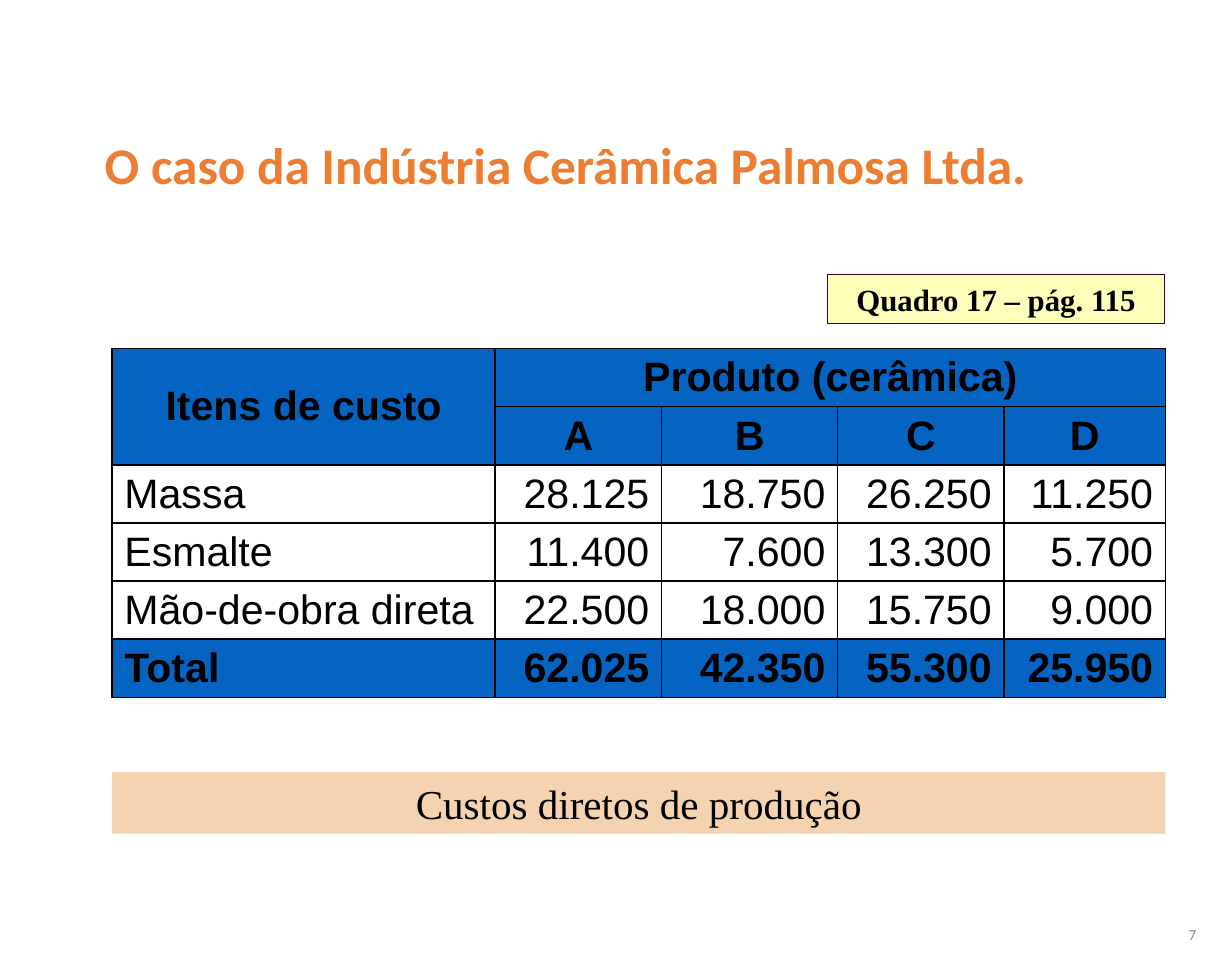
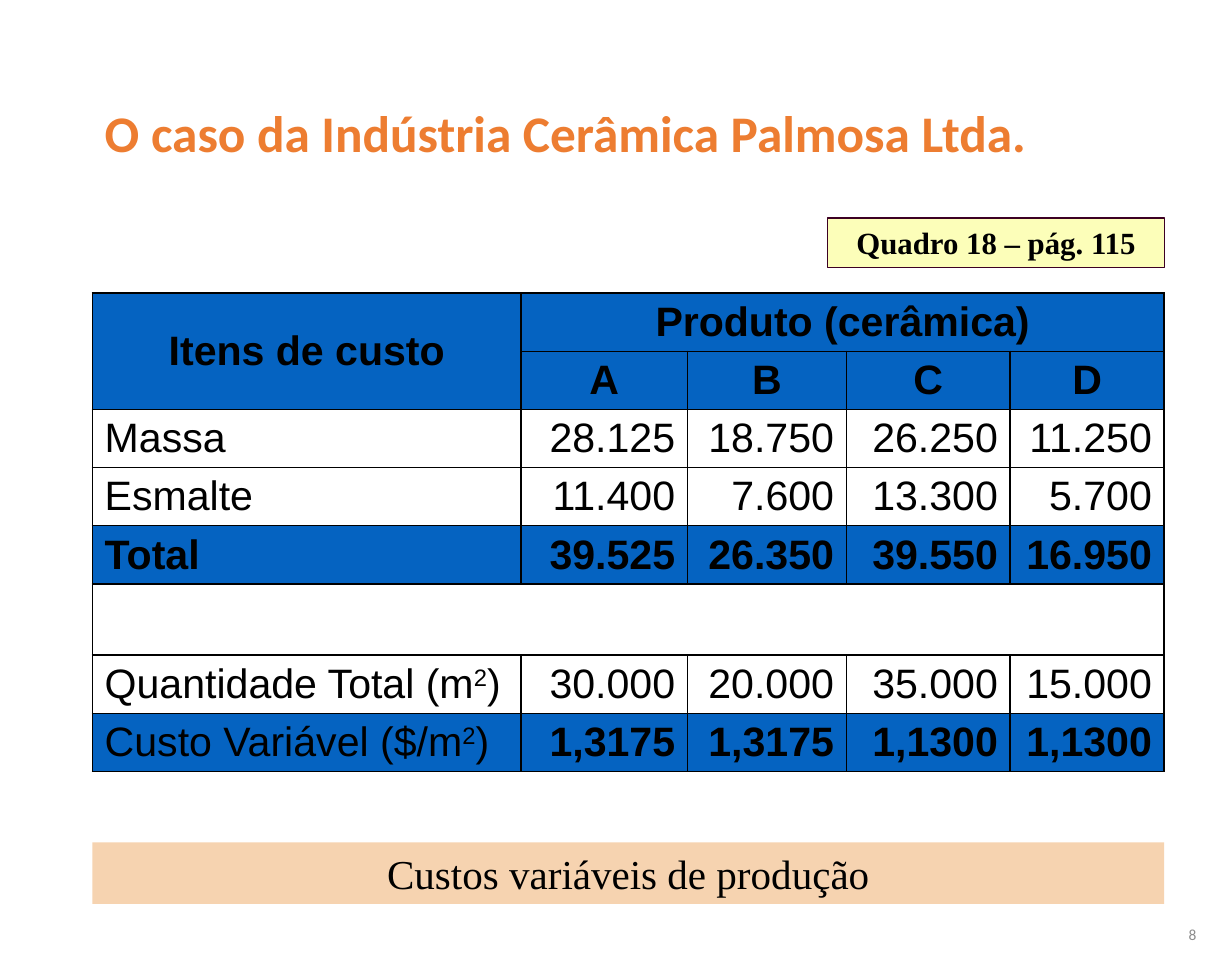
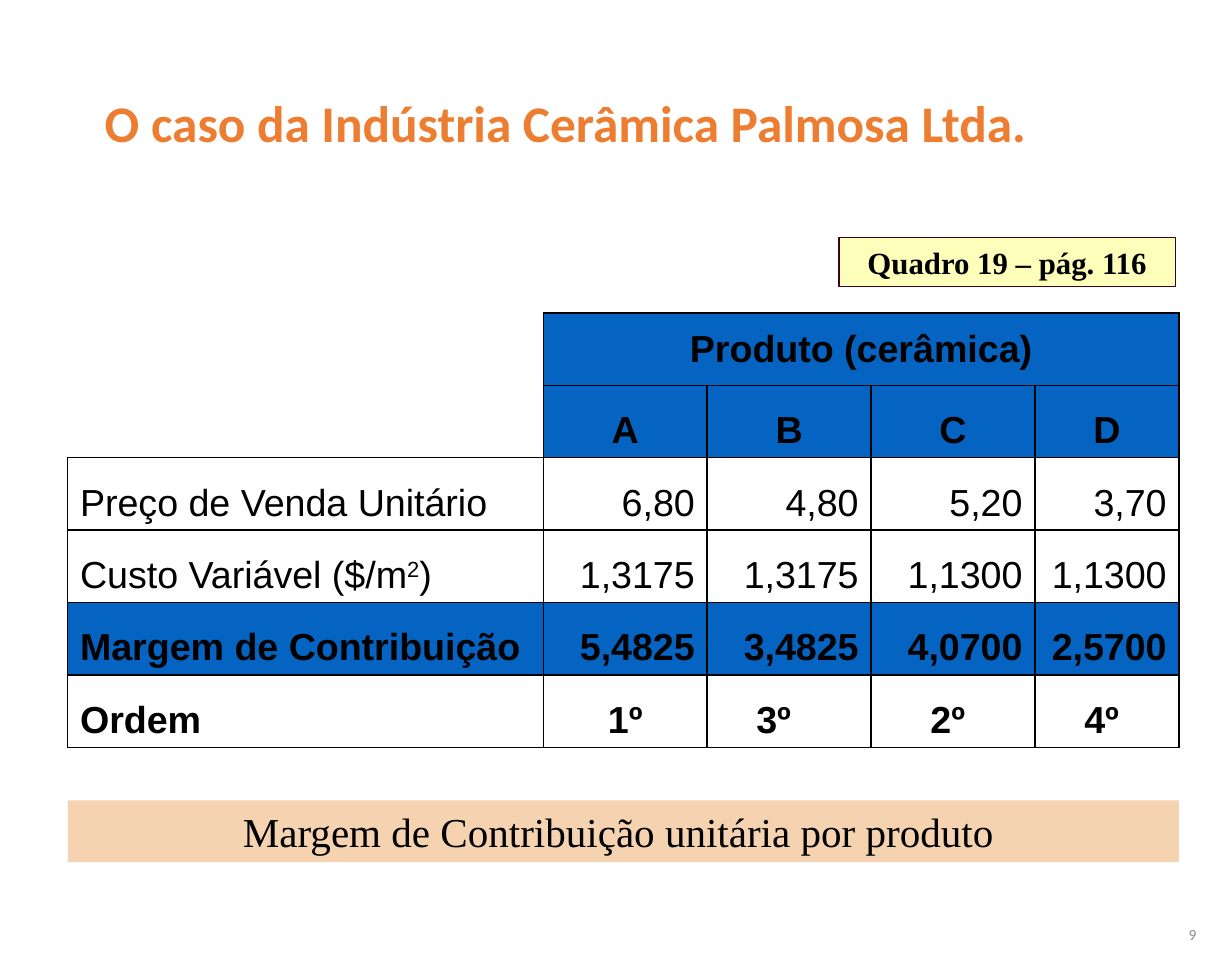
from lxml import etree
from pptx import Presentation
from pptx.dml.color import RGBColor
from pptx.enum.shapes import MSO_SHAPE
from pptx.enum.text import MSO_ANCHOR, MSO_AUTO_SIZE, PP_ALIGN
from pptx.oxml.ns import qn
from pptx.util import Inches, Pt

CENTER, RIGHT, JUSTIFY = PP_ALIGN.CENTER, PP_ALIGN.RIGHT, PP_ALIGN.JUSTIFY
TOP, MIDDLE, BOTTOM = MSO_ANCHOR.TOP, MSO_ANCHOR.MIDDLE, MSO_ANCHOR.BOTTOM

ORANGE, BLACK, WHITE, GRAY = "ED7D31", "000000", "FFFFFF", "8C8C8C"
BLUE, PEACH, YELLOW, PLUM = "0563C1", "F6D3B0", "FCFEB9", "3C0023"
TITLE = "O caso da Indústria Cerâmica Palmosa Ltda."

# Row kind: fill, bold label, bold values, alignment of values
ROW_STYLES = {
    "item": (WHITE, False, False, RIGHT),
    "total": (BLUE, True, True, RIGHT),
    "unit cost": (BLUE, False, True, RIGHT),
    "rank": (WHITE, True, True, CENTER),
    "gap": (None, False, False, RIGHT),
}

SLIDES = [
    dict(
        number=7, title_box=(0.75, 0.7, 8.94, 1.32),
        source="Quadro 17 – pág. 115", source_at=(6.72, 2.23),
        caption="Custos diretos de produção", caption_top=6.27,
        corner="Itens de custo", size=24, table_box=(0.91, 2.83, 8.55, 3),
        columns=[3.11, 1.35, 1.43, 1.35, 1.31],
        heights=[0.4, 0.4, 0.4, 0.45, 0.4, 0.4],
        rows=[
            ("item", "Massa", "28.125", "18.750", "26.250", "11.250"),
            ("item", "Esmalte", "11.400", "7.600", "13.300", "5.700"),
            ("item", "Mão-de-obra direta", "22.500", "18.000", "15.750", "9.000"),
            ("total", "Total", "62.025", "42.350", "55.300", "25.950"),
        ],
    ),
    dict(
        number=8, title_box=(0.75, 0.44, 8.94, 1.32),
        source="Quadro 18 – pág. 115", source_at=(6.72, 1.77),
        caption="Custos variáveis de produção", caption_top=6.84,
        corner="Itens de custo", size=24, table_box=(0.75, 2.38, 8.7, 4.08),
        columns=[3.48, 1.35, 1.29, 1.33, 1.25],
        heights=[0.35] * 5 + [0.58] + [0.35] * 2,
        rows=[
            ("item", "Massa", "28.125", "18.750", "26.250", "11.250"),
            ("item", "Esmalte", "11.400", "7.600", "13.300", "5.700"),
            ("total", "Total", "39.525", "26.350", "39.550", "16.950"),
            ("gap", "", "", "", "", ""),
            ("item", "Quantidade Total (m²)", "30.000", "20.000", "35.000", "15.000"),
            ("unit cost", "Custo Variável ($/m²)", "1,3175", "1,3175", "1,1300", "1,1300"),
        ],
    ),
    dict(
        number=9, title_box=(0.75, 0.36, 9.02, 1.32),
        source="Quadro 19 – pág. 116", source_at=(6.81, 1.93),
        caption="Margem de Contribuição unitária por produto ", caption_top=6.5,
        corner="", size=22, table_box=(0.55, 2.54, 9.02, 3.53),
        columns=[3.86, 1.33, 1.33, 1.33, 1.17],
        heights=[3.53 / 6] * 6,
        rows=[
            ("item", "Preço de Venda Unitário", "6,80", "4,80", "5,20", "3,70"),
            ("item", "Custo Variável ($/m²)", "1,3175", "1,3175", "1,1300", "1,1300"),
            ("total", "Margem de Contribuição", "5,4825", "3,4825", "4,0700", "2,5700"),
            ("rank", "Ordem", "1º", "3º", "2º ", "4º "),
        ],
    ),
]


def write(frame, text, font, size, color, bold=False, align=None):
    """Fill a text frame with one paragraph; "²" becomes a superscript 2."""
    paragraph = frame.paragraphs[0]
    before, square, after = text.partition("²")
    paragraph.text = before
    if square:
        paragraph.add_run().text = "2"
        paragraph.add_run().text = after
        paragraph.runs[1].font._element.set("baseline", "30000")
    paragraph.alignment = align
    for run in paragraph.runs:
        run.font.name = font
        run.font.size = Pt(size)
        run.font.bold = bold
        run.font.color.rgb = RGBColor.from_string(color)


def style_cell(cell, fill, sides="LRTB"):
    """Draw black borders on the given sides, then set the fill."""
    properties = cell._tc.get_or_add_tcPr()
    for side in "LRTB":
        border = etree.SubElement(properties, qn(f"a:ln{side}"), w=str(Pt(1)))
        if side in sides:
            solid = etree.SubElement(border, qn("a:solidFill"))
            etree.SubElement(solid, qn("a:srgbClr"), val=BLACK)
        else:
            etree.SubElement(border, qn("a:noFill"))
    if fill:
        cell.fill.solid()
        cell.fill.fore_color.rgb = RGBColor.from_string(fill)
    else:
        cell.fill.background()


prs = Presentation()
prs.slide_width = Inches(10)
prs.slide_height = Inches(95 / 12)

for content in SLIDES:
    slide = prs.slides.add_slide(prs.slide_layouts[5])
    size = content["size"]

    title = slide.shapes.title
    title.left, title.top, title.width, title.height = map(Inches, content["title_box"])
    title.text_frame.auto_size = MSO_AUTO_SIZE.NONE
    title.text_frame.vertical_anchor = MIDDLE
    write(title.text_frame, TITLE, "Calibri", 30, ORANGE, True, PP_ALIGN.LEFT)
    title.text_frame.paragraphs[0].line_spacing = 0.9

    # Cost table
    left, top, width, height = content["table_box"]
    table_frame = slide.shapes.add_table(
        len(content["heights"]), len(content["columns"]),
        Inches(left), Inches(top), Inches(width), Inches(height))
    costs = table_frame.table
    costs.first_row = costs.horz_banding = False
    for column, column_width in zip(costs.columns, content["columns"]):
        column.width = Inches(column_width)
    for row, row_height in zip(costs.rows, content["heights"]):
        row.height = Inches(row_height)
    table_frame.height = Inches(height)

    # Two header rows
    corner = content["corner"]
    headers = [[corner, "Produto (cerâmica)", "", "", ""], ["", "A", "B", "C", "D"]]
    for r, labels in enumerate(headers):
        for c, label in enumerate(labels):
            cell = costs.cell(r, c)
            open_corner = c == 0 and not corner
            style_cell(cell, None if open_corner else BLUE, "RB" if open_corner else "LRTB")
            cell.vertical_anchor = MIDDLE if r == 0 else BOTTOM
            if label:
                write(cell.text_frame, label, "Arial", size, BLACK, True, CENTER)
    costs.cell(0, 0).merge(costs.cell(1, 0))
    costs.cell(0, 1).merge(costs.cell(0, 4))

    # Body rows
    for r, (kind, *texts) in enumerate(content["rows"], start=2):
        fill, label_bold, value_bold, value_align = ROW_STYLES[kind]
        for c, text in enumerate(texts):
            cell = costs.cell(r, c)
            sides = "LRTB"
            if kind == "gap":
                sides = {0: "LTB", 4: "RTB"}.get(c, "TB")
            style_cell(cell, fill, sides)
            cell.vertical_anchor = BOTTOM
            if text:
                write(cell.text_frame, text, "Arial", size, BLACK,
                      value_bold if c else label_bold, value_align if c else JUSTIFY)
            if text == "3º":
                cell.margin_right = Inches(0.35)

    page = slide.shapes.add_textbox(Inches(7.73), Inches(7.32), Inches(2.08), Inches(0.53))
    page.text_frame.word_wrap = True
    page.text_frame.vertical_anchor = MIDDLE
    write(page.text_frame, str(content["number"]), "Calibri", 9, GRAY, align=RIGHT)

    # Caption band under the table and source label above it
    boxes = [
        (content["caption"], (left, content["caption_top"], width, 0.5), PEACH, None, 24, False),
        (content["source"], (*content["source_at"], 2.73, 0.4), YELLOW, PLUM, 18, True),
    ]
    for text, place, fill, outline, text_size, bold in boxes:
        box = slide.shapes.add_shape(MSO_SHAPE.RECTANGLE, *map(Inches, place))
        box.shadow.inherit = False
        box.fill.solid()
        box.fill.fore_color.rgb = RGBColor.from_string(fill)
        if outline:
            box.line.color.rgb = RGBColor.from_string(outline)
            box.line.width = Pt(0.75)
        else:
            box.line.fill.background()
        box.text_frame.word_wrap = True
        box.text_frame.auto_size = MSO_AUTO_SIZE.SHAPE_TO_FIT_TEXT
        box.text_frame.vertical_anchor = TOP
        write(box.text_frame, text, "Times New Roman", text_size, BLACK, bold, CENTER)

prs.save("out.pptx")
